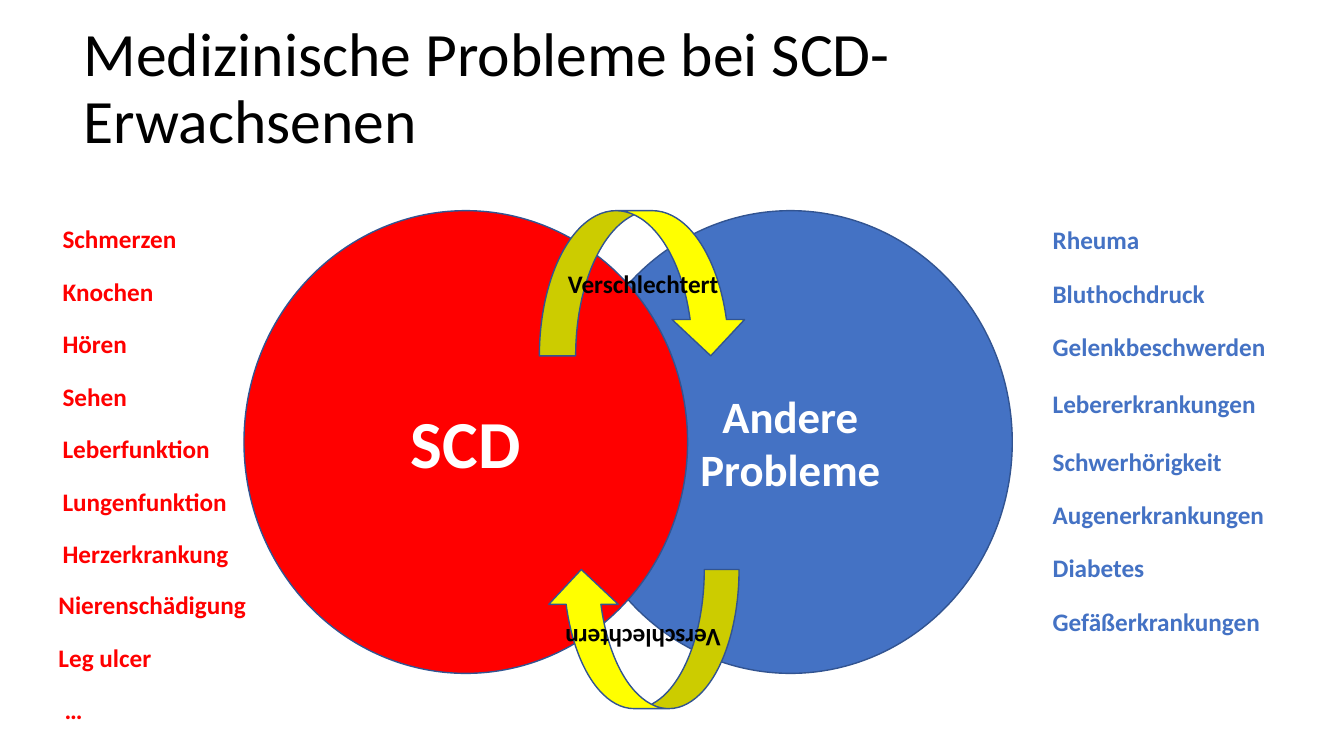
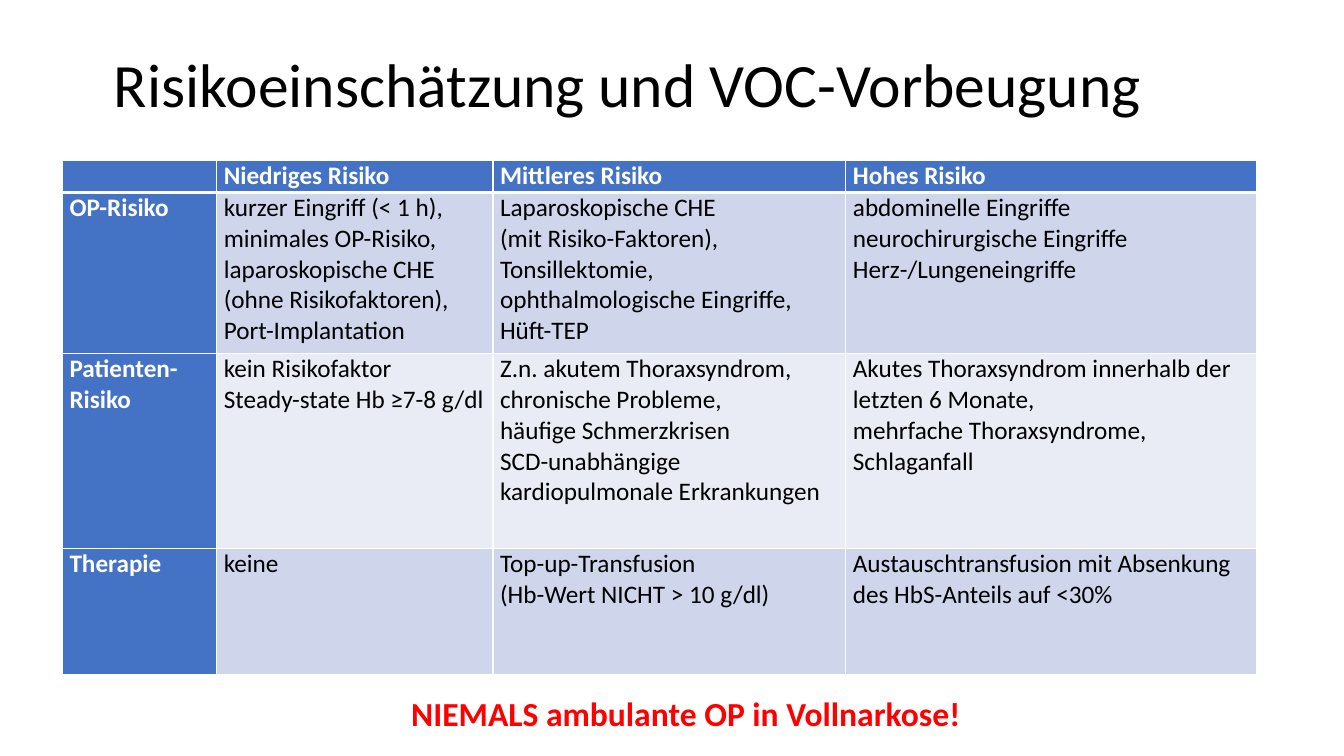
from itertools import product

from lxml.etree import SubElement
from pptx import Presentation
from pptx.dml.color import RGBColor
from pptx.enum.shapes import MSO_SHAPE as Shape
from pptx.enum.text import MSO_ANCHOR as Anchor, MSO_AUTO_SIZE as AutoSize, PP_ALIGN as Align
from pptx.oxml.ns import qn
from pptx.util import Pt

COLORS = {
    "text": "000000",
    "paper": "FFFFFF",
    "scd": "FF0000",
    "other": "4472C4",
    "outline": "325491",
    "arrow": "FFFF00",
    "band_dark": "CFD5EA",
    "band_light": "E9EBF5",
}
FONT = "Calibri"
EMU_PER_PX = 9144
PT_PER_PX = 0.72
BODY_SIZE = 18
BODY_LINE = 22
TITLE_ONLY, TWO_CONTENT = 5, 3


def px(*lengths):
    return [length * EMU_PER_PX for length in lengths]


def color(name):
    return RGBColor.from_string(COLORS[name])


class Deck:
    def __init__(self, width, height):
        self.presentation = Presentation()
        self.presentation.slide_width, self.presentation.slide_height = px(width, height)
        self.slide = None

    def place(self, shape, box):
        shape.left, shape.top, shape.width, shape.height = px(*box)

    def add_text(self, paragraph, text, size=BODY_SIZE, ink="text", bold=False):
        for number, line in enumerate(text.split("\n")):
            if number:
                paragraph.add_line_break()
            run = paragraph.add_run()
            run.text = line
            run.font.name = FONT
            run.font.size = Pt(size)
            run.font.bold = bold
            run.font.color.rgb = color(ink)

    def add_slide(self, layout, title, box):
        layouts = self.presentation.slide_layouts
        self.slide = self.presentation.slides.add_slide(layouts[layout])
        heading = self.slide.shapes.title
        self.place(heading, box)
        frame = heading.text_frame
        frame.auto_size = AutoSize.NONE
        frame.vertical_anchor = Anchor.MIDDLE
        paragraph = frame.paragraphs[0]
        paragraph.alignment = Align.LEFT
        paragraph.line_spacing = 0.9
        self.add_text(paragraph, title, 44)

    def add_list(self, holder, box, entries, ink):
        body = self.slide.placeholders[holder]
        self.place(body, box)
        frame = body.text_frame
        frame.auto_size = AutoSize.NONE
        frame.vertical_anchor = Anchor.TOP
        for number, (text, pitch, indent) in enumerate(entries):
            paragraph = frame.add_paragraph() if number else frame.paragraphs[0]
            paragraph.line_spacing = 1.0
            gap = pitch * PT_PER_PX - BODY_LINE if number else 0
            paragraph.space_before = Pt(gap)
            paragraph.space_after = Pt(0)
            properties = paragraph._p.get_or_add_pPr()
            properties.set("marL", str(indent * EMU_PER_PX))
            properties.set("indent", "0")
            SubElement(properties, qn("a:buNone"))
            self.add_text(paragraph, text, ink=ink, bold=True)

    def add_figure(self, kind, box, fill, text, size, ink, rotation=0):
        figure = self.slide.shapes.add_shape(kind, *px(*box))
        figure.shadow.inherit = False
        figure.rotation = rotation
        figure.fill.solid()
        figure.fill.fore_color.rgb = color(fill)
        figure.line.color.rgb = color("outline")
        figure.line.width = Pt(1)
        frame = figure.text_frame
        frame.word_wrap = True
        frame.vertical_anchor = Anchor.MIDDLE
        paragraph = frame.paragraphs[0]
        paragraph.alignment = Align.CENTER
        self.add_text(paragraph, text, size, ink, True)

    def add_note(self, box, text, size, ink):
        frame = self.slide.shapes.add_textbox(*px(*box)).text_frame
        frame.word_wrap = True
        self.add_text(frame.paragraphs[0], text, size, ink, True)

    def add_border(self, cell, side, width):
        properties = cell._tc.get_or_add_tcPr()
        line = SubElement(properties, qn(f"a:ln{side}"), w=str(Pt(width)))
        fill = SubElement(line, qn("a:solidFill"))
        SubElement(fill, qn("a:srgbClr"), val=COLORS["paper"])

    def add_table(self, box, widths, heights, rows):
        shapes = self.slide.shapes
        table = shapes.add_table(len(heights), len(widths), *px(*box)).table
        for column, width in zip(table.columns, px(*widths)):
            column.width = width
        for row, height in zip(table.rows, px(*heights)):
            row.height = height
        for r, c in product(range(len(heights)), range(len(widths))):
            self.fill_cell(table.cell(r, c), rows[r][c], r, c)

    def fill_cell(self, cell, lines, row, column):
        is_header = row == 0 or column == 0
        cell.margin_left, cell.margin_right = px(7, 7)
        cell.margin_top = cell.margin_bottom = 0
        for side in "LRTB":
            thick = (row == 0 and side == "B") or (row == 1 and side == "T")
            self.add_border(cell, side, 3 if thick else 1)
        band = "band_dark" if row % 2 else "band_light"
        cell.fill.solid()
        cell.fill.fore_color.rgb = color("other" if is_header else band)
        frame = cell.text_frame
        for number, line in enumerate(lines):
            paragraph = frame.add_paragraph() if number else frame.paragraphs[0]
            if is_header:
                paragraph.space_after = Pt(6)
            self.add_text(paragraph, line, ink="paper" if is_header else "text", bold=is_header)


SCD_PROBLEMS = [
    ("Schmerzen", 0, 4),
    ("Knochen", 53, 4),
    ("Hören", 52, 4),
    ("Sehen", 53, 4),
    ("Leberfunktion", 52, 4),
    ("Lungenfunktion", 53, 4),
    ("Herzerkrankung", 52, 4),
    ("Nierenschädigung", 52, 0),
    ("Leg ulcer", 53, 0),
    ("…", 52, 6),
]
OTHER_PROBLEMS = [
    ("Rheuma", 0, 0),
    ("Bluthochdruck", 54, 0),
    ("Gelenkbeschwerden", 53, 0),
    ("Lebererkrankungen", 57, 0),
    ("Schwerhörigkeit", 58, 0),
    ("Augenerkrankungen", 53, 0),
    ("Diabetes", 53, 0),
    ("Gefäßerkrankungen", 54, 0),
]
RISK_ROWS = [
    [[], ["Niedriges Risiko"], ["Mittleres Risiko"], ["Hohes Risiko"]],
    [
        ["OP-Risiko"],
        [
            "kurzer Eingriff (< 1 h),",
            "minimales OP-Risiko,",
            "laparoskopische CHE (ohne Risikofaktoren),",
            "Port-Implantation",
        ],
        [
            "Laparoskopische CHE\n(mit Risiko-Faktoren),",
            "Tonsillektomie,",
            "ophthalmologische Eingriffe,",
            "Hüft-TEP",
        ],
        ["abdominelle Eingriffe", "neurochirurgische Eingriffe", "Herz-/Lungeneingriffe"],
    ],
    [
        ["Patienten-Risiko"],
        ["kein Risikofaktor", "Steady-state Hb ≥7-8 g/dl"],
        [
            "Z.n. akutem Thoraxsyndrom,",
            "chronische Probleme,",
            "häufige Schmerzkrisen",
            "SCD-unabhängige kardiopulmonale Erkrankungen",
        ],
        [
            "Akutes Thoraxsyndrom innerhalb der letzten 6 Monate,",
            "mehrfache Thoraxsyndrome,",
            "Schlaganfall",
        ],
    ],
    [
        ["Therapie"],
        ["keine"],
        ["Top-up-Transfusion", "(Hb-Wert NICHT > 10 g/dl)"],
        ["Austauschtransfusion mit Absenkung des HbS-Anteils auf <30%"],
    ],
]


def build_problems(deck):
    deck.add_slide(TWO_CONTENT, "Medizinische Probleme bei SCD-Erwachsenen", (73, 17, 1150, 145))
    deck.add_list(1, (48, 217, 215, 512), SCD_PROBLEMS, "scd")
    deck.add_list(2, (1034, 218, 250, 422), OTHER_PROBLEMS, "other")
    circles = [(564, "other", "Andere Probleme", 32), (242, "scd", "SCD", 48)]
    for left, fill, text, size in circles:
        deck.add_figure(Shape.OVAL, (left, 209, 440, 459), fill, text, size, "paper")
    arrows = [
        ((535, 209, 206, 144), "Verschlechtert", 0),
        ((542, 565, 191, 138), "Verschlechtern", 180),
    ]
    for box, text, rotation in arrows:
        deck.add_figure(Shape.CURVED_DOWN_ARROW, box, "arrow", text, BODY_SIZE, "text", rotation)


def build_risks(deck):
    deck.add_slide(TITLE_ONLY, "Risikoeinschätzung und VOC-Vorbeugung", (103, 14, 1053, 145))
    deck.add_table((62, 159, 1184, 510), (153, 274, 350, 407), (32, 160, 193, 125), RISK_ROWS)
    deck.add_note((398, 683, 579, 50), "NIEMALS ambulante OP in Vollnarkose!", 24, "scd")


def main():
    deck = Deck(1333, 750)
    build_problems(deck)
    build_risks(deck)
    deck.presentation.save("out.pptx")


if __name__ == "__main__":
    main()
